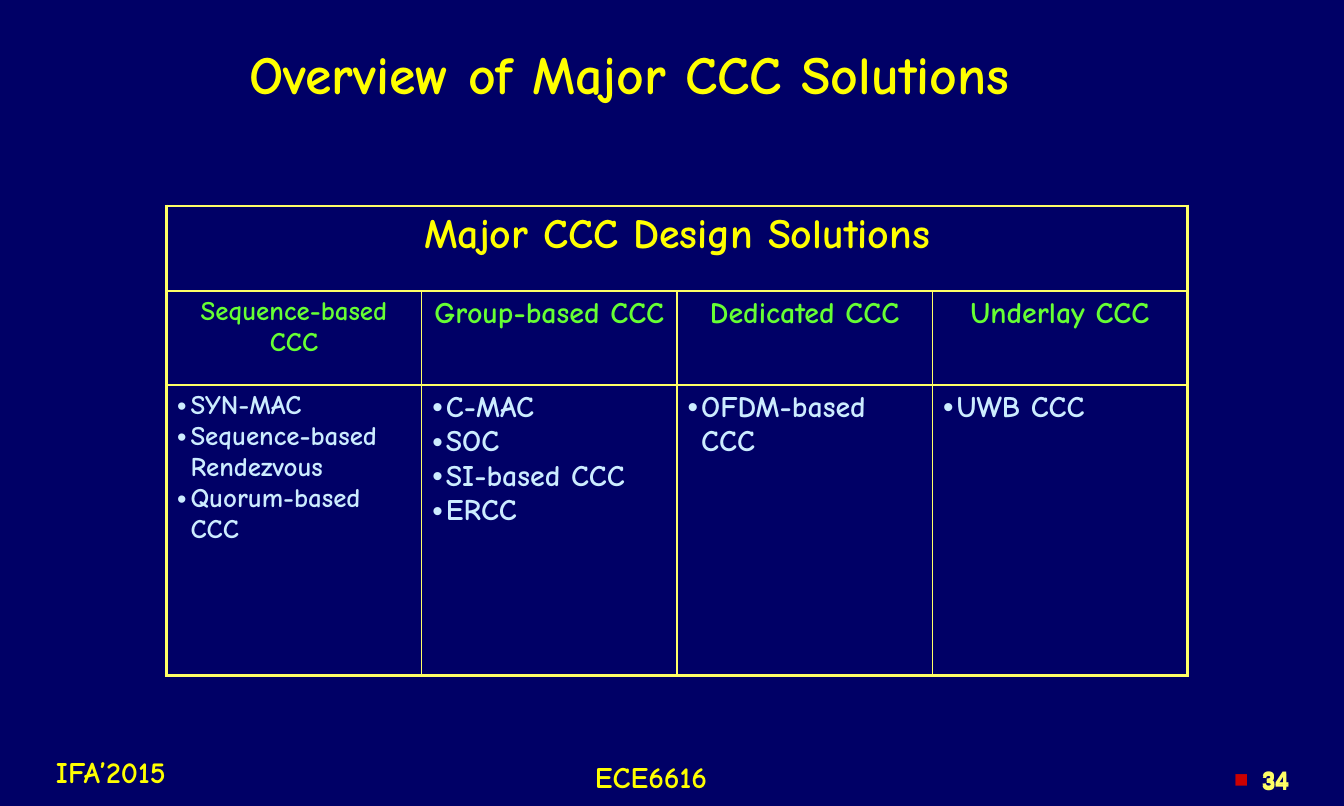
from lxml.etree import SubElement
from pptx import Presentation
from pptx.dml.color import RGBColor
from pptx.enum.text import MSO_ANCHOR as Anchor, PP_ALIGN as Align
from pptx.oxml import parse_xml
from pptx.oxml.ns import nsdecls, qn
from pptx.util import Inches, Pt

PX_PER_INCH = 192
NAVY = RGBColor(0x00, 0x00, 0x66)
YELLOW = RGBColor(0xFF, 0xFF, 0x00)
PALE_YELLOW = RGBColor(0xFF, 0xFF, 0x66)
GREEN = RGBColor(0x66, 0xFF, 0x33)
PALE_BLUE = RGBColor(0xCC, 0xEC, 0xFF)
RED = RGBColor(0xCC, 0x00, 0x00)
COMIC = "Comic Neue"

ROW_HEIGHTS = [152, 168, 519]
TABLE_HEADING = "Major CCC Design Solutions"
SOLUTIONS = [  # heading, methods, text size
    ("Sequence-based CCC",
     ["SYN-MAC", "Sequence-based Rendezvous", "Quorum-based CCC"], 18),
    ("Group-based CCC", ["C-MAC", "SOC", "SI-based CCC", "ERCC"], 20),
    ("Dedicated CCC", ["OFDM-based CCC"], 20),
    ("Underlay CCC", ["UWB CCC"], 20),
]


def px(length):
    return Inches(length / PX_PER_INCH)


def add_bullet(paragraph, symbol, indent, color=None):
    properties = paragraph._p.get_or_add_pPr()
    properties.set("marL", str(int(px(indent))))
    properties.set("indent", str(-int(px(indent))))
    if color is not None:
        bullet_color = SubElement(properties, qn("a:buClr"))
        SubElement(bullet_color, qn("a:srgbClr"), val=str(color))
    SubElement(properties, qn("a:buFont"), typeface="Arial")
    SubElement(properties, qn("a:buChar"), char=symbol)


def write(paragraph, text, size, color, align=Align.LEFT, name=COMIC):
    paragraph.alignment = align
    run = paragraph.add_run()
    run.text = text
    for key, value in {"size": Pt(size), "name": name, "bold": True}.items():
        setattr(run.font, key, value)
    run.font.color.rgb = color


def add_text_box(slide, box, anchor=Anchor.TOP):
    frame = slide.shapes.add_textbox(*map(px, box)).text_frame
    frame.word_wrap = True
    frame.vertical_anchor = anchor
    return frame.paragraphs[0]


def add_title(slide, box):
    write(add_text_box(slide, box, Anchor.MIDDLE),
          "Overview of Major CCC Solutions", 36, YELLOW)


def add_footer(slide, box, text):
    paragraph = add_text_box(slide, box)
    paragraph.line_spacing = 0.9
    write(paragraph, text, 20, YELLOW, Align.CENTER)


def add_page_number(slide, box):
    # The number stands twice, once with a red square bullet
    for has_bullet in (True, False):
        paragraph = add_text_box(slide, box)
        if has_bullet:
            paragraph.line_spacing = 0.95
            add_bullet(paragraph, "■", 50, RED)
        write(paragraph, "34", 16, PALE_YELLOW, Align.RIGHT, "Arial")


def set_borders(cell, outer_sides):
    properties = cell._tc.get_or_add_tcPr()
    for position, side in enumerate("LRTB"):
        width = Pt(2.25 if side in outer_sides else 1)
        properties.insert(position, parse_xml(
            f'<a:ln{side} {nsdecls("a")} w="{width}"><a:solidFill>'
            f'<a:srgbClr val="{PALE_YELLOW}"/></a:solidFill></a:ln{side}>'))


def add_solutions_table(slide, box):
    column_count = len(SOLUTIONS)
    row_count = len(ROW_HEIGHTS)
    table = slide.shapes.add_table(
        row_count, column_count, *map(px, box)).table
    table.first_row = table.horz_banding = False
    for row, row_height in zip(table.rows, ROW_HEIGHTS):
        row.height = px(row_height)
    for column in table.columns:
        column.width = px(box[2] / column_count)

    # Heading across all columns
    heading_cell = table.cell(0, 0)
    heading_cell.merge(table.cell(0, column_count - 1))
    write(heading_cell.text_frame.paragraphs[0], TABLE_HEADING, 28, YELLOW,
          Align.CENTER)

    # One column per kind of solution
    for index, (heading, methods, size) in enumerate(SOLUTIONS):
        write(table.cell(1, index).text_frame.paragraphs[0], heading, size,
              GREEN, Align.CENTER)
        frame = table.cell(2, index).text_frame
        for number, method in enumerate(methods):
            paragraph = frame.add_paragraph() if number else frame.paragraphs[0]
            add_bullet(paragraph, "•", 24)
            write(paragraph, method, size, PALE_BLUE)

    # Thick frame, thin inner lines
    for row in range(row_count):
        for column in range(column_count):
            cell = table.cell(row, column)
            cell.fill.background()
            if cell.is_spanned:
                continue
            span = cell.span_width if cell.is_merge_origin else 1
            edges = {"L": column == 0, "R": column + span == column_count,
                     "T": row == 0, "B": row == row_count - 1}
            set_borders(cell, [side for side, outer in edges.items() if outer])


def main():
    presentation = Presentation()
    presentation.slide_width = px(2400)
    presentation.slide_height = px(1440)
    slide = presentation.slides.add_slide(presentation.slide_layouts[6])
    slide.background.fill.solid()
    slide.background.fill.fore_color.rgb = NAVY

    add_footer(slide, (56, 1344, 284, 79), "IFA’2015")
    add_footer(slide, (1027, 1354, 271, 79), "ECE6616")
    add_title(slide, (426, 42, 1893, 177))
    add_solutions_table(slide, (297, 368, 1824, sum(ROW_HEIGHTS)))
    add_page_number(slide, (2160, 1360, 160, 64))
    presentation.save("out.pptx")


if __name__ == "__main__":
    main()
